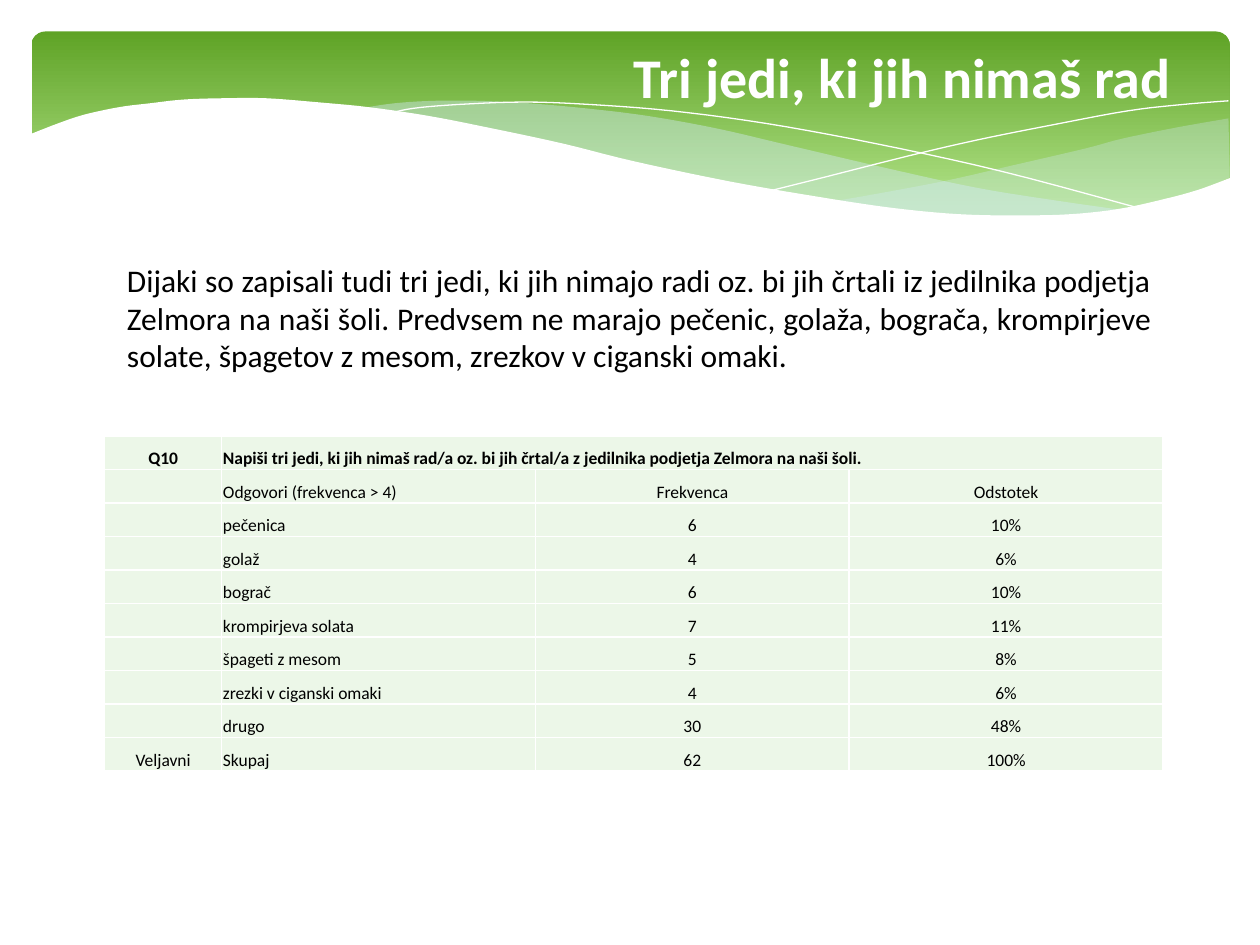
import pptx
import pptx.dml.color
import pptx.enum.shapes
import pptx.enum.text
import pptx.oxml
import pptx.oxml.ns
import pptx.util

PX = 9144  # 100 px to the inch
FONT = "Calibri"
WHITE, BLACK = "FFFFFF", "000000"
PALE_GREEN, PALE_BLUE = "ECF7E8", "D6ECFF"
ALIGN = pptx.enum.text.PP_ALIGN
ANCHOR = pptx.enum.text.MSO_ANCHOR

RIGHT_WAVE = [
    [(975, 94), (935, 101), (891, 110), (861, 118), (805, 131), (753, 143), (706, 152), (661, 160)],
    [(661, 160), (705, 165), (745, 169), (792, 172), (835, 172), (881, 167), (921, 160),
     (949, 152), (976, 141)],
]
LONG_WAVE = [
    [(893, 167), (837, 159), (775, 149), (706, 134), (629, 116), (569, 102), (514, 92),
     (465, 86), (420, 82), (380, 80), (344, 80), (313, 82), (286, 86)],
    [(286, 86), (342, 94), (404, 106), (449, 116), (530, 135), (601, 150), (665, 161),
     (722, 168), (773, 172), (828, 173), (867, 170), (893, 167)],
]
LOWER_EDGE = [
    [(977, 141), (950, 151), (920, 159), (887, 166), (850, 170), (809, 171), (761, 170),
     (708, 165), (648, 156), (579, 144), (503, 128), (447, 114), (391, 102), (340, 92),
     (292, 85), (250, 81), (211, 78), (177, 78), (146, 79), (119, 82), (95, 85), (67, 91),
     (46, 98), (23, 107)],
    [(23, 224), (977, 224)],
]
FALLING_LINE = [[(309, 90), (328, 86), (363, 83), (416, 81), (469, 83), (533, 88), (608, 98),
                 (695, 114), (795, 136), (907, 166)]]
RISING_LINE = [[(613, 151), (653, 141), (720, 124), (776, 111), (836, 99), (895, 88),
                (938, 83), (975, 80)]]

QUESTION = ("Napiši tri jedi, ki jih nimaš rad/a oz. bi jih črtal/a z jedilnika "
            "podjetja Zelmora na naši šoli.")
BODY = ("Dijaki so zapisali tudi tri jedi, ki jih nimajo radi oz. bi jih črtali iz jedilnika "
        "podjetja Zelmora na naši šoli. Predvsem ne marajo pečenic, golaža, bograča, "
        "krompirjeve solate, špagetov z mesom, zrezkov v ciganski omaki.")
ANSWERS = [
    ("Q10", QUESTION, "", ""),
    ("", "Odgovori (frekvenca > 4)", "Frekvenca", "Odstotek"),
    ("", "pečenica", "6", "10%"),
    ("", "golaž", "4", "6%"),
    ("", "bograč", "6", "10%"),
    ("", "krompirjeva solata", "7", "11%"),
    ("", "špageti z mesom", "5", "8%"),
    ("", "zrezki v ciganski omaki", "4", "6%"),
    ("", "drugo", "30", "48%"),
    ("Veljavni", "Skupaj", "62", "100%"),
]


def rgb(value):
    return pptx.dml.color.RGBColor.from_string(value)


def px(*lengths):
    return [pptx.util.Emu(length * PX) for length in lengths]


def write(frame, text, size=10, color=BLACK, bold=False, align=ALIGN.LEFT):
    para = frame.paragraphs[0]
    para.alignment = align
    if not text:
        para._p.get_or_add_endParaRPr().set("sz", str(size * 100))
        return
    span = para.add_run()
    span.text = text
    span.font.name, span.font.size, span.font.bold = FONT, pptx.util.Pt(size), bold
    span.font.color.rgb = rgb(color)


def smooth(points, steps=5):
    """Return a Catmull-Rom curve through the points; two points stay a straight line."""
    if len(points) < 3:
        return points
    padded = [points[0], *points, points[-1]]
    curve = [points[0]]
    for a, b, c, d in zip(padded, padded[1:], padded[2:], padded[3:]):
        for step in range(1, steps + 1):
            t = step / steps
            curve.append(tuple(
                (2 * q + (r - p) * t + (2 * p - 5 * q + 4 * r - s) * t ** 2
                 + (3 * q - p - 3 * r + s) * t ** 3) / 2
                for p, q, r, s in zip(a, b, c, d)))
    return curve


def add_wave(page, edges, fill=None, opacity=100):
    """Draw a filled outline, or an open white hairline when there is no fill."""
    points = [(round(x * PX), round(y * PX)) for edge in edges for x, y in smooth(edge)]
    builder = page.shapes.build_freeform(*points[0], scale=1.0)
    builder.add_line_segments(points[1:], close=fill is not None)
    wave = builder.convert_to_shape()
    wave.shadow.inherit = False
    if fill is None:
        wave.fill.background()
        wave.line.color.rgb = rgb(WHITE)
        wave.line.width = pptx.util.Pt(0)
        return
    wave.line.fill.background()
    wave.fill.solid()
    wave.fill.fore_color.rgb = rgb(fill)
    if opacity < 100:
        color = wave._element.spPr.find(".//" + pptx.oxml.ns.qn("a:srgbClr"))
        alpha = pptx.oxml.ns.qn("a:alpha")
        color.append(color.makeelement(alpha, {"val": str(opacity * 1000)}))


def add_band(page):
    band = page.shapes.add_shape(
        pptx.enum.shapes.MSO_SHAPE.ROUNDED_RECTANGLE, *px(25, 25, 951, 156))
    band.adjustments[0] = 0.07
    band.shadow.inherit = False
    band.line.fill.background()
    band.fill.gradient()
    band.fill.gradient_angle = 270
    for stop, color, position in zip(band.fill.gradient_stops, ("5FA326", "B2E389"), (0, 0.9)):
        stop.color.rgb = rgb(color)
        stop.position = position


def place_title(page, text):
    title = page.shapes.title
    title.left, title.top, title.width, title.height = px(445, 29, 543, 87)
    title.text_frame.vertical_anchor = ANCHOR.TOP
    title.text_frame.auto_size = pptx.enum.text.MSO_AUTO_SIZE.NONE
    write(title.text_frame, text, size=32, color=WHITE, bold=True, align=ALIGN.CENTER)
    page.shapes._spTree.append(title._element)  # in front of the waves


def add_borders(cell):
    properties = cell._tc.get_or_add_tcPr()
    for side in "LRTB":
        properties.append(pptx.oxml.parse_xml(
            f'<a:ln{side} {pptx.oxml.ns.nsdecls("a")} w="12700"><a:solidFill>'
            f'<a:srgbClr val="{WHITE}"/></a:solidFill></a:ln{side}>'))


def add_answer_table(page):
    frame = page.shapes.add_table(len(ANSWERS), 4, *px(83, 346, 841, 266))
    table = frame.table
    table.first_row = table.horz_banding = False
    for column, width in zip(table.columns, px(93, 249, 249, 249)):
        column.width = width
    for r, answer in enumerate(ANSWERS):
        for c, text in enumerate(answer):
            cell = table.cell(r, c)
            add_borders(cell)
            cell.fill.solid()
            cell.fill.fore_color.rgb = rgb(PALE_GREEN)
            cell.vertical_anchor = ANCHOR.BOTTOM
            cell.margin_left, cell.margin_right, cell.margin_top, cell.margin_bottom = px(1, 1, 1, 0)
            write(cell.text_frame, text, bold=r == 0,
                  align=ALIGN.LEFT if c == 1 else ALIGN.CENTER)
    table.cell(0, 1).merge(table.cell(0, 3))


def add_body(page):
    box = page.shapes.add_textbox(*px(91, 202, 833, 101))
    box.text_frame.word_wrap = True
    write(box.text_frame, BODY, size=18, align=ALIGN.JUSTIFY)


def main():
    deck = pptx.Presentation()
    deck.slide_width, deck.slide_height = px(1000, 750)
    page = deck.slides.add_slide(deck.slide_layouts[5])
    add_band(page)
    add_wave(page, RIGHT_WAVE, fill=PALE_BLUE, opacity=29)
    add_wave(page, LONG_WAVE, fill=PALE_BLUE, opacity=40)
    add_wave(page, FALLING_LINE)
    add_wave(page, RISING_LINE)
    add_wave(page, LOWER_EDGE, fill=WHITE)
    place_title(page, "Tri jedi, ki jih nimaš rad")
    add_answer_table(page)
    add_body(page)
    deck.save("out.pptx")


if __name__ == "__main__":
    main()
